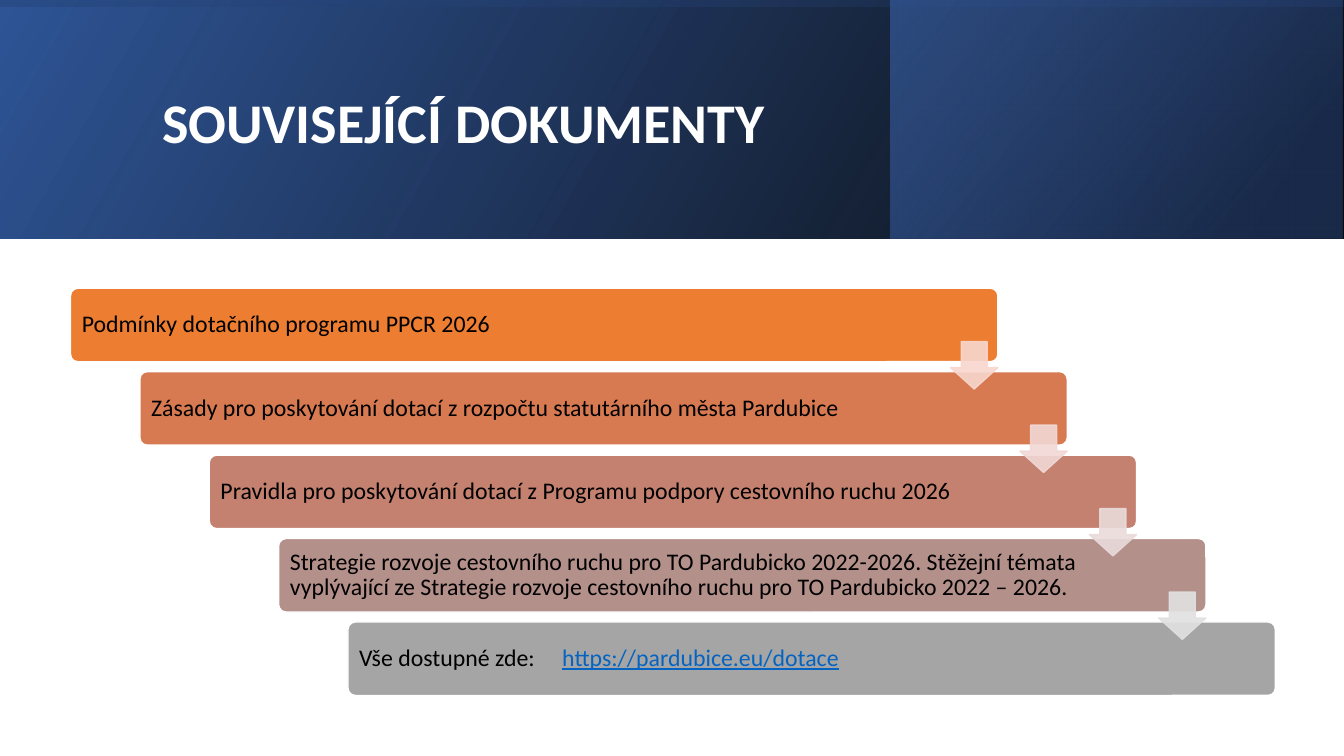
from itertools import repeat

from lxml import etree
from pptx import Presentation
from pptx.dml.color import RGBColor
from pptx.enum import shapes, text
from pptx.oxml import ns
from pptx.util import Pt

FONT = "Calibri"
BLACK = RGBColor(0x00, 0x00, 0x00)
WHITE = RGBColor(0xFF, 0xFF, 0xFF)
BLUE = RGBColor(0x2F, 0x55, 0x97)
NAVY = RGBColor(0x20, 0x38, 0x64)
BRIGHT_BLUE = RGBColor(0x44, 0x72, 0xC4)
LINK_BLUE = RGBColor(0x05, 0x63, 0xC1)

PAGE_W, PAGE_H = 960, 540
BAND_H = 170.6
TITLE = "SOUVISEJÍCÍ DOKUMENTY"

# left, top, width, height, rotation, clockwise gradient angle,
# stops as (position, colour, opacity in percent)
BANDS = [
    (0, 0, PAGE_W, BAND_H, 0, 330, [(0, BLACK, 96), (1, BLUE, 100)]),
    (636.2, 0, 323, BAND_H, 0, 320, [(0.19, NAVY, 68), (1, BRIGHT_BLUE, 48)]),
    ((PAGE_W - BAND_H) / 2, (BAND_H - PAGE_W) / 2, BAND_H, PAGE_W, 270, 350,
     [(0.23, BLUE, 16), (0.99, BLACK, 45)]),
]

# text, link text, bar colour
STEPS = [
    ("Podmínky dotačního programu PPCR 2026", "", RGBColor(0xED, 0x7D, 0x31)),
    ("Zásady pro poskytování dotací z rozpočtu statutárního města Pardubice", "",
     RGBColor(0xD8, 0x7A, 0x51)),
    ("Pravidla pro poskytování dotací z Programu podpory cestovního ruchu 2026", "",
     RGBColor(0xC4, 0x81, 0x70)),
    ("Strategie rozvoje cestovního ruchu pro TO Pardubicko 2022-2026. Stěžejní témata "
     "vyplývající ze Strategie rozvoje cestovního ruchu pro TO Pardubicko 2022 – 2026.", "",
     RGBColor(0xB4, 0x90, 0x8B)),
    ("Vše dostupné zde:\t", "https://pardubice.eu/dotace", RGBColor(0xA5, 0xA5, 0xA5)),
]
ARROW_COLOURS = [
    RGBColor(0xF8, 0xD7, 0xCE), RGBColor(0xF1, 0xD8, 0xD4),
    RGBColor(0xE9, 0xDB, 0xDA), RGBColor(0xE1, 0xE1, 0xE1),
]

BAR_LEFT, BAR_TOP, BAR_W, BAR_H = 50.4, 205.9, 662.4, 52.5
STEP_X, STEP_Y = 49.55, 59.6
ARROW_SIZE, ARROW_DROP = 33.8, 38.2
LINK_TAB = 145


def add_shape(page, kind, left, top, width, height):
    shape = page.shapes.add_shape(kind, Pt(left), Pt(top), Pt(width), Pt(height))
    shape.shadow.inherit = False
    return shape


def paint(shape, fill, line):
    shape.fill.solid()
    shape.fill.fore_color.rgb = fill
    shape.line.color.rgb = line
    shape.line.width = Pt(1)


def set_opacity(shape, percents):
    """Give each colour in the shape, in order, its opacity."""
    for colour, percent in zip(shape._element.iter(ns.qn("a:srgbClr")), percents):
        etree.SubElement(colour, ns.qn("a:alpha"), val=str(percent * 1000))


def add_band(page, left, top, width, height, rotation, angle, stops):
    band = add_shape(page, shapes.MSO_SHAPE.RECTANGLE, left, top, width, height)
    band.rotation = rotation
    band._element.spPr.find(ns.qn("a:xfrm")).set("flipH", "1")
    band.line.fill.background()
    band.fill.gradient()
    band.fill.gradient_angle = 360 - angle
    for stop, (position, colour, _) in zip(band.fill.gradient_stops, stops):
        stop.position = position
        stop.color.rgb = colour
    set_opacity(band, [opacity for _, _, opacity in stops])


def write(shape, words, size, colour, bold=False, tab=None):
    """Fill the shape with one left-aligned paragraph and return it."""
    frame = shape.text_frame
    frame.word_wrap = True
    frame.vertical_anchor = text.MSO_ANCHOR.MIDDLE
    para = frame.paragraphs[0]
    para.alignment = text.PP_ALIGN.LEFT
    para.line_spacing = 0.9
    if tab:
        tabs = etree.SubElement(para._p.get_or_add_pPr(), ns.qn("a:tabLst"))
        etree.SubElement(tabs, ns.qn("a:tab"), pos=str(Pt(tab)), algn="l")
    para.font.name = FONT
    para.font.size = Pt(size)
    para.font.bold = bold
    para.font.color.rgb = colour
    para.add_run().text = words
    return para


def add_bar(page, left, top, words, link, colour):
    bar = add_shape(page, shapes.MSO_SHAPE.ROUNDED_RECTANGLE, left, top, BAR_W, BAR_H)
    bar.adjustments[0] = 0.1
    paint(bar, colour, WHITE)
    frame = bar.text_frame
    frame.margin_left, frame.margin_right = Pt(6.5), Pt(90)
    frame.margin_top = frame.margin_bottom = Pt(5)
    para = write(bar, words, 17, BLACK, tab=LINK_TAB if link else None)
    if link:
        span = para.add_run()
        span.text = link
        span.font.color.rgb = LINK_BLUE
        span.font.underline = True


def add_arrow(page, left, top, colour):
    arrow = add_shape(page, shapes.MSO_SHAPE.DOWN_ARROW, left, top, ARROW_SIZE, ARROW_SIZE)
    arrow.adjustments[0] = 0.55
    arrow.adjustments[1] = 0.45
    paint(arrow, colour, colour)
    set_opacity(arrow, repeat(90))


def main():
    deck = Presentation()
    deck.slide_width, deck.slide_height = Pt(PAGE_W), Pt(PAGE_H)
    page = deck.slides.add_slide(deck.slide_layouts[6])
    for band in BANDS:
        add_band(page, *band)
    title = page.shapes.add_textbox(Pt(108.7), Pt(27.4), Pt(765.4), Pt(123.8))
    write(title, TITLE, 40, WHITE, bold=True)
    for i, step in enumerate(STEPS):
        add_bar(page, BAR_LEFT + i * STEP_X, BAR_TOP + i * STEP_Y, *step)
    for i, colour in enumerate(ARROW_COLOURS):
        add_arrow(page, BAR_LEFT + BAR_W - ARROW_SIZE + i * STEP_X,
                  BAR_TOP + ARROW_DROP + i * STEP_Y, colour)
    deck.save("out.pptx")


if __name__ == "__main__":
    main()
